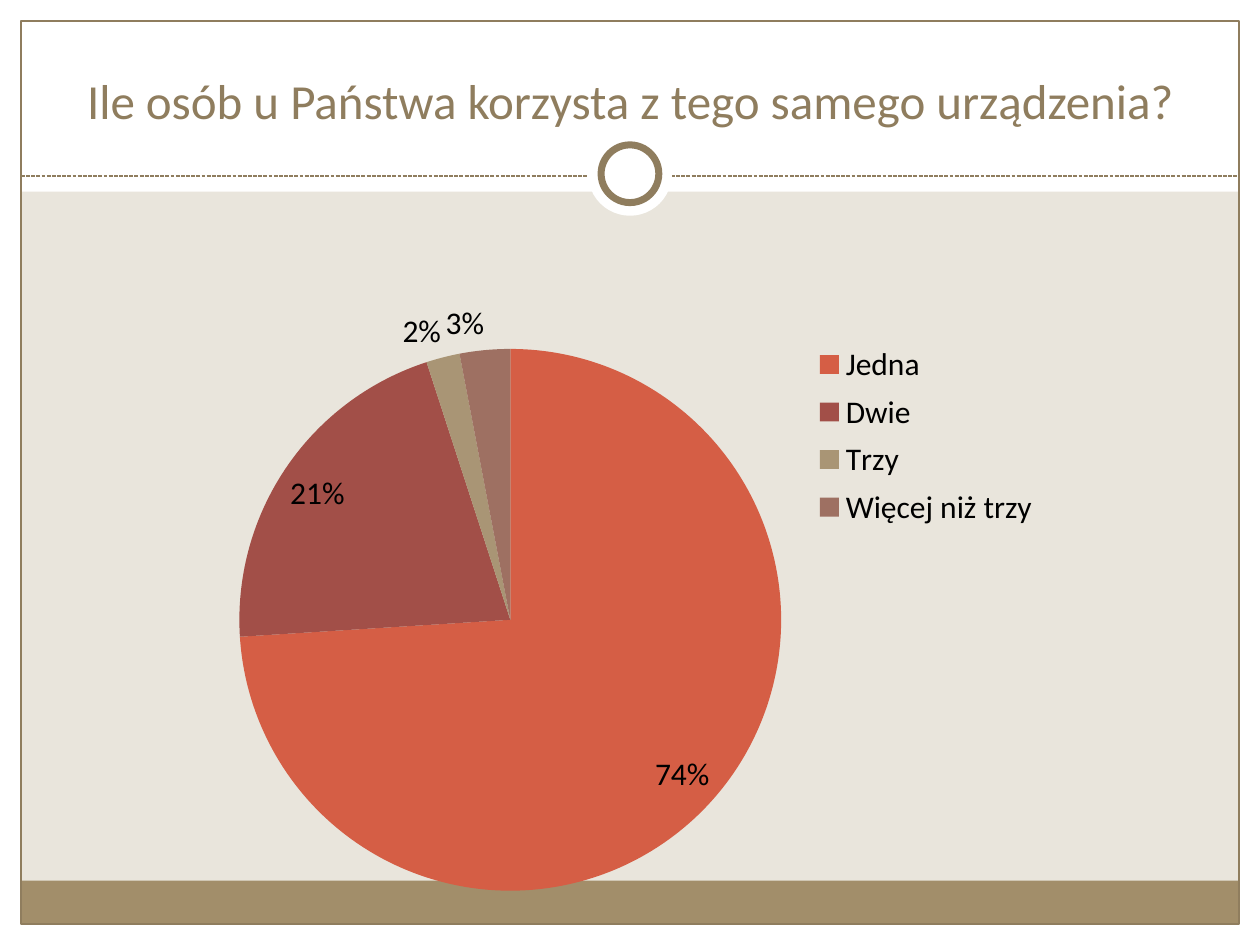
from lxml.etree import SubElement
from pptx import Presentation
from pptx.chart.data import CategoryChartData
from pptx.dml.color import RGBColor
from pptx.enum.chart import XL_CHART_TYPE, XL_LABEL_POSITION, XL_LEGEND_POSITION
from pptx.enum.dml import MSO_LINE
from pptx.enum.shapes import MSO_CONNECTOR, MSO_SHAPE
from pptx.enum.text import MSO_ANCHOR, PP_ALIGN
from pptx.oxml.ns import qn
from pptx.util import Pt

HUES = {
    "back": "E9E5DC", "white": "FFFFFF", "black": "000000",
    "tan": "A28E6A", "brown": "8F7D5E",
    "one": "D55E45", "two": "A24F48", "three": "A99575", "more": "9E7062",
}
WIDE, HIGH, EDGE = 720, 540, 12


def hue(name):
    return RGBColor.from_string(HUES[name])


def apply(item, **values):
    for key, value in values.items():
        setattr(item, key, value)


def place(part, index, **spots):
    """Give a chart part a fixed place, as shares of the chart."""
    for old in part.findall(qn("c:layout")):
        part.remove(old)
    layout = SubElement(part, qn("c:layout"))
    part.insert(index, layout)
    manual = SubElement(layout, qn("c:manualLayout"))
    for tag, value in spots.items():
        SubElement(manual, qn(f"c:{tag}")).set("val", str(value))


class Page:
    font = "Calibri"

    def __init__(self, slide):
        self.slide = slide
        self.shapes = slide.shapes
        self.paint(slide.background.fill, "back")

    def paint(self, fill, name):
        if name:
            fill.solid()
            fill.fore_color.rgb = hue(name)
        else:
            fill.background()

    def shape(self, kind, box, fill=None, line=None, width=0.75):
        item = self.shapes.add_shape(kind, *map(Pt, box))
        item.shadow.inherit = False
        self.paint(item.fill, fill)
        self.paint(item.line.fill, line)
        if line:
            item.line.width = Pt(width)

    def rule(self, left, right, y):
        item = self.shapes.add_connector(
            MSO_CONNECTOR.STRAIGHT, Pt(left), Pt(y), Pt(right), Pt(y))
        item.line.color.rgb = hue("brown")
        apply(item.line, width=Pt(0.75), dash_style=MSO_LINE.SQUARE_DOT)
        SubElement(item._element.spPr, qn("a:effectLst"))

    def title(self, text, box, size):
        frame = self.shapes.add_textbox(*map(Pt, box)).text_frame
        apply(frame, word_wrap=True, vertical_anchor=MSO_ANCHOR.BOTTOM)
        para = frame.paragraphs[0]
        apply(para, text=text, alignment=PP_ALIGN.CENTER)
        self.style(para.runs[0].font, size, "brown")

    def style(self, font, size, color, name=None):
        apply(font, name=name or self.font, size=Pt(size))
        font.color.rgb = hue(color)

    def pie(self, box, rows):
        data = CategoryChartData()
        data.categories = [row[0] for row in rows]
        data.add_series("Series 1", [row[1] for row in rows])
        chart = self.shapes.add_chart(
            XL_CHART_TYPE.PIE, *map(Pt, box), data).chart
        apply(chart, has_title=False, has_legend=True)
        self.style(chart.font, 18, "black", "Cambria")

        # Slices
        plot = chart.plots[0]
        plot.vary_by_categories = True
        for i, row in enumerate(rows):
            self.paint(plot.series[0].points[i].format.fill, row[2])

        # Labels
        labels = plot.series[0].data_labels
        apply(labels, show_percentage=True, show_value=False,
              show_legend_key=False, number_format="0%",
              number_format_is_linked=False,
              position=XL_LABEL_POSITION.BEST_FIT)
        self.style(labels.font, 18, "black")

        # Legend and places
        legend = chart.legend
        apply(legend, position=XL_LEGEND_POSITION.RIGHT,
              include_in_layout=False)
        self.style(legend.font, 18, "black")
        place(legend._element, 1, xMode="edge", yMode="edge",
              x=0.64, y=0.08, w=0.19, h=0.32)
        area = chart._chartSpace.chart.plotArea
        place(area, 0, layoutTarget="inner", xMode="edge", yMode="edge",
              x=0.19, y=0.1, w=0.43, h=0.87)


def main():
    deck = Presentation()
    apply(deck, slide_width=Pt(WIDE), slide_height=Pt(HIGH))
    page = Page(deck.slides.add_slide(deck.slide_layouts[6]))
    rect, oval = MSO_SHAPE.RECTANGLE, MSO_SHAPE.OVAL
    inner = WIDE - 2 * EDGE

    # White margins and top band
    for box in [(0, HIGH - EDGE, WIDE, EDGE), (0, 0, WIDE, 109.5),
                (0, 0, EDGE, HIGH), (WIDE - EDGE, 0, EDGE, HIGH)]:
        page.shape(rect, box, "white")

    # Bottom bar, frame and dashed rule
    page.shape(rect, (EDGE, 503.2, inner, 24.5), "tan")
    page.shape(rect, (EDGE, EDGE, inner, HIGH - 2 * EDGE), line="brown")
    page.rule(EDGE, WIDE - EDGE, 100.6)

    # Ring at the centre
    for size, line in [(48, None), (33, "brown")]:
        box = ((WIDE - size) / 2, 99.3 - size / 2, size, size)
        page.shape(oval, box, "white", line, 4)

    # Title and chart
    page.title("Ile osób u Państwa korzysta z tego samego urządzenia?",
               (24, 18, 672, 59.5), 28)
    page.pie((0, 163.5, WIDE, 356.5), [
        ("Jedna", 74, "one"), ("Dwie", 21, "two"),
        ("Trzy", 2, "three"), ("Więcej niż trzy", 3, "more")])

    deck.save("out.pptx")


if __name__ == "__main__":
    main()
